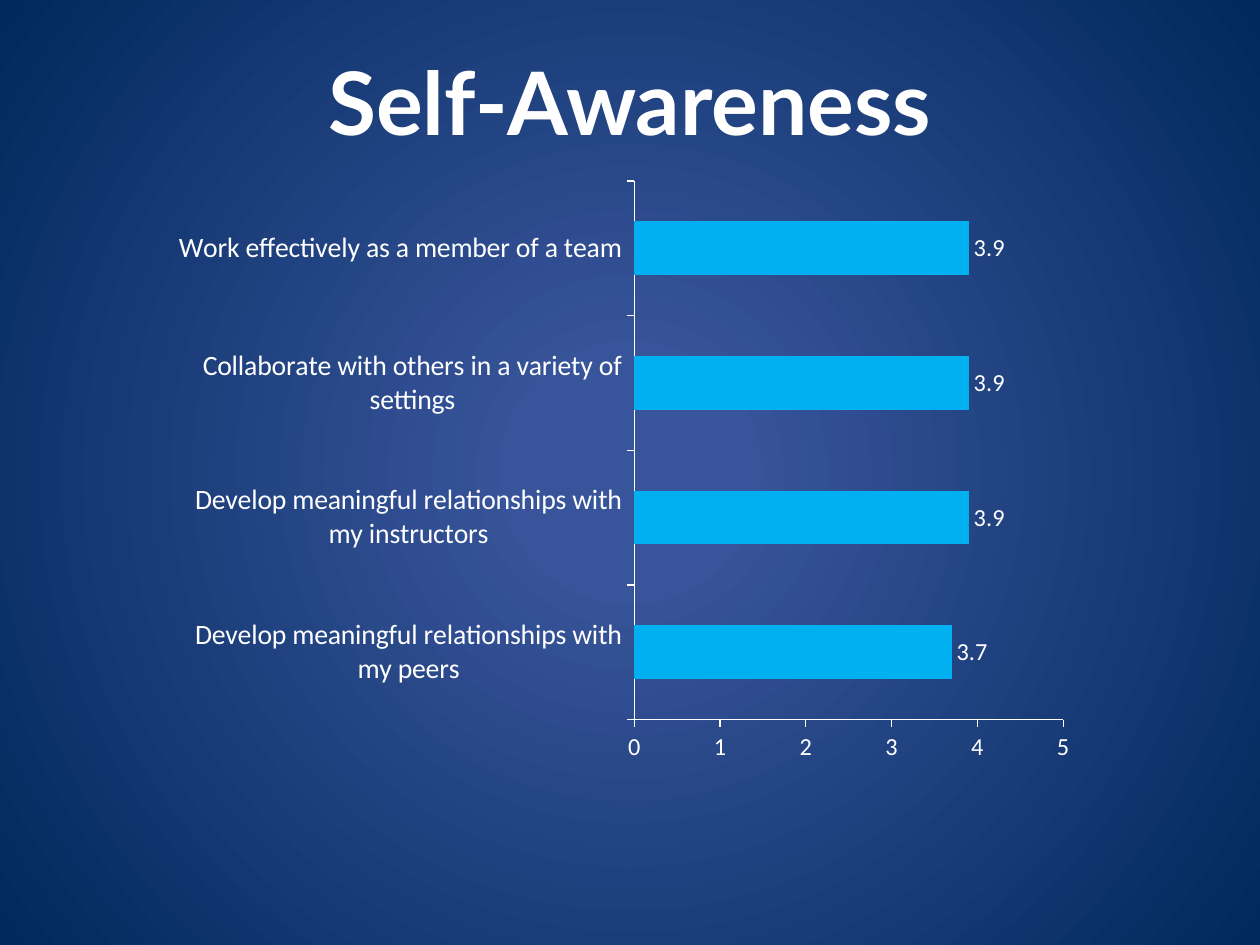
import pptx
import pptx.chart.data
import pptx.dml.color
import pptx.enum.chart
import pptx.enum.text
import pptx.oxml
import pptx.oxml.ns
import pptx.util
from pptx.util import Inches

COLORS = {"text": "FFFFFF", "bar": "00B0F0", "glow": "38549A", "edge": "00295C"}

RATINGS = {
    "Develop meaningful relationships with my peers": 3.7,
    "Develop meaningful relationships with my instructors": 3.9,
    "Collaborate with others in a variety of settings": 3.9,
    "Work effectively as a member of a team": 3.9,
}


def color(name):
    return pptx.dml.color.RGBColor.from_string(COLORS[name])


def set_attributes(target, values):
    for name, value in values.items():
        setattr(target, name, value)


class SlideBuilder:
    title_font = "Lato"
    chart_font = "Calibri"

    def __init__(self, slide):
        self.slide = slide

    def style_font(self, font, name, size, bold=False):
        set_attributes(font, {"name": name, "size": pptx.util.Pt(size), "bold": bold})
        font.color.rgb = color("text")

    def add_radial_background(self, stops):
        """Fill the background from the centre outwards; stops maps percent to colour name."""
        self.slide.background.fill.solid()
        properties = self.slide.element.find(".//" + pptx.oxml.ns.qn("p:bgPr"))
        stop_xml = "".join(
            f'<a:gs pos="{percent * 1000}"><a:srgbClr val="{COLORS[name]}"/></a:gs>'
            for percent, name in stops.items()
        )
        gradient = pptx.oxml.parse_xml(
            f'<a:gradFill {pptx.oxml.ns.nsdecls("a")} rotWithShape="1">'
            f"<a:gsLst>{stop_xml}</a:gsLst>"
            '<a:path path="circle"><a:fillToRect l="50000" t="50000" r="50000" b="50000"/></a:path>'
            "</a:gradFill>"
        )
        properties.replace(properties[0], gradient)

    def add_title(self, text, left, top, width, height):
        shape = self.slide.shapes.add_textbox(left, top, width, height)
        set_attributes(shape.text_frame, {
            "word_wrap": True,
            "vertical_anchor": pptx.enum.text.MSO_ANCHOR.MIDDLE,
        })
        paragraph = shape.text_frame.paragraphs[0]
        paragraph.alignment = pptx.enum.text.PP_ALIGN.CENTER
        run = paragraph.add_run()
        run.text = text
        self.style_font(run.font, self.title_font, 50, bold=True)

    def style_axis(self, axis, size, values):
        set_attributes(axis, {
            "has_major_gridlines": False,
            "major_tick_mark": pptx.enum.chart.XL_TICK_MARK.OUTSIDE,
            "minor_tick_mark": pptx.enum.chart.XL_TICK_MARK.NONE,
            **values,
        })
        axis.format.line.color.rgb = color("text")
        axis.format.line.width = pptx.util.Pt(0.75)
        self.style_font(axis.tick_labels.font, self.chart_font, size)

    def place_plot(self, chart, **fractions):
        """Fix the inner plot area as fractions of the chart."""
        plot_area = chart.element.find(".//" + pptx.oxml.ns.qn("c:plotArea"))
        for layout in plot_area.findall(pptx.oxml.ns.qn("c:layout")):
            plot_area.remove(layout)
        sizes = "".join(f'<c:{name} val="{value}"/>' for name, value in fractions.items())
        plot_area.insert(0, pptx.oxml.parse_xml(
            f'<c:layout {pptx.oxml.ns.nsdecls("c")}><c:manualLayout>'
            '<c:layoutTarget val="inner"/><c:xMode val="edge"/><c:yMode val="edge"/>'
            f"{sizes}</c:manualLayout></c:layout>"
        ))

    def add_bar_chart(self, ratings, left, top, width, height):
        data = pptx.chart.data.CategoryChartData()
        data.categories = list(ratings)
        data.add_series("Series 1", list(ratings.values()))
        chart = self.slide.shapes.add_chart(
            pptx.enum.chart.XL_CHART_TYPE.BAR_CLUSTERED, left, top, width, height, data
        ).chart
        set_attributes(chart, {"has_legend": False, "has_title": False})
        self.style_font(chart.font, self.chart_font, 10)

        plot = chart.plots[0]
        set_attributes(plot, {
            "gap_width": 150, "vary_by_categories": False, "has_data_labels": True,
        })
        series_fill = plot.series[0].format.fill
        series_fill.solid()
        series_fill.fore_color.rgb = color("bar")
        set_attributes(plot.data_labels, {
            "show_value": True,
            "number_format": "0.0",
            "number_format_is_linked": False,
            "position": pptx.enum.chart.XL_LABEL_POSITION.OUTSIDE_END,
        })
        self.style_font(plot.data_labels.font, self.chart_font, 14)

        self.style_axis(chart.category_axis, 16, {})
        self.style_axis(chart.value_axis, 14, {
            "minimum_scale": 0, "maximum_scale": 5, "major_unit": 1,
        })
        set_attributes(chart.value_axis.tick_labels, {
            "number_format": "0", "number_format_is_linked": False,
        })
        self.place_plot(chart, x=0.5, y=0.05, w=0.48, h=0.83)


def main():
    presentation = pptx.Presentation()
    set_attributes(presentation, {"slide_width": Inches(10), "slide_height": Inches(7.5)})
    builder = SlideBuilder(presentation.slides.add_slide(presentation.slide_layouts[6]))
    builder.add_radial_background({14: "glow", 100: "edge"})
    builder.add_title("Self-Awareness", Inches(0.5), Inches(0.17), Inches(9), Inches(1.25))
    builder.add_bar_chart(RATINGS, Inches(1.42), Inches(1.18), Inches(7.16), Inches(5.15))
    presentation.save("out.pptx")


if __name__ == "__main__":
    main()
